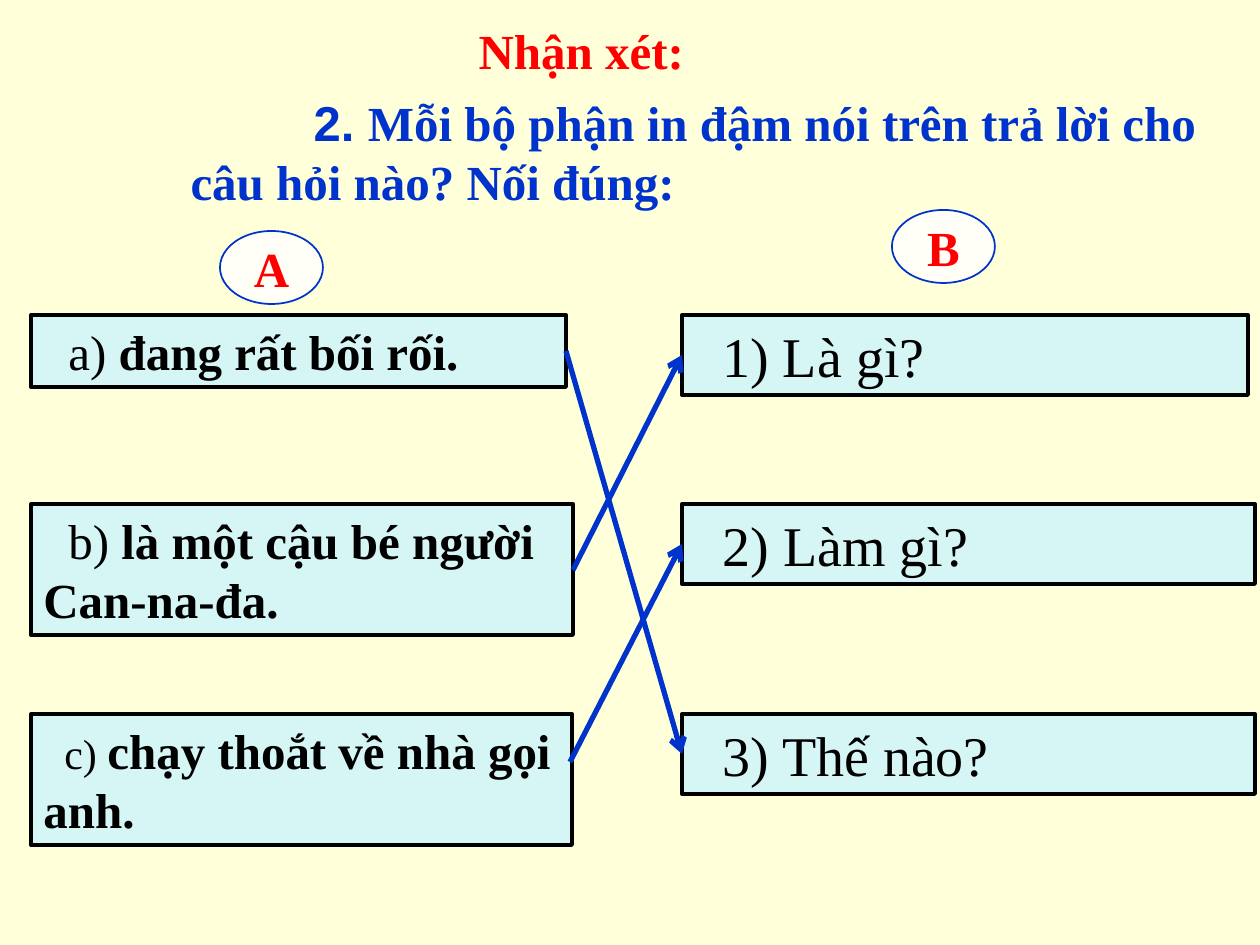
from pptx import Presentation
from pptx.dml.color import RGBColor
from pptx.enum.shapes import MSO_CONNECTOR, MSO_SHAPE
from pptx.enum.text import MSO_ANCHOR, MSO_AUTO_SIZE, PP_ALIGN
from pptx.oxml.ns import qn
from pptx.util import Pt
from lxml.etree import SubElement

PX = 914400 // 126
FONT = "Times New Roman"
COLORS = {"background": "FFFFD9", "red": "FF0000", "blue": "0033CC",
          "black": "000000", "box": "D6F5F5", "label": "FFFFF7"}

HEADING = ("Nhận xét:", (466, 14, 328, 72))
QUESTION = ([("2. ", 28, True, "Arial"),
             ("Mỗi bộ phận in đậm nói trên trả lời cho câu hỏi nào? Nối đúng:", 28, True, FONT)],
            (178, 86, 1070, 131), 123)
LABELS = [("A", 220, 231), ("B", 892, 210)]
LABEL_SIZE = (103, 73)
ROW_TOPS = [315, 504, 714]
LEFT_X, RIGHT_X = 31, 682
PHRASES = [("a) ", 28, "đang rất bối rối.", 535, 72, 25),
           ("b) ", 28, "là một cậu bé người Can-na-đa.", 542, 131, 25),
           ("c) ", 24, "chạy thoắt về nhà gọi anh.", 541, 131, 21)]
QUESTION_TYPES = [("1) Là gì?", 566), ("2) Làm gì?", 573), ("3) Thế nào?", 573)]
TYPE_HEIGHT = 80
MATCHES = [((566, 351), 2), ((573, 570), 0), ((570, 762), 1)]


def color(name):
    return RGBColor.from_string(COLORS[name])


def place(shape, area):
    shape.left, shape.top, shape.width, shape.height = (v * PX for v in area)


def write(shape, runs, ink, indent=0, align=PP_ALIGN.LEFT, anchor=MSO_ANCHOR.TOP):
    frame = shape.text_frame
    frame.word_wrap = True
    frame.auto_size = MSO_AUTO_SIZE.NONE
    frame.vertical_anchor = anchor
    paragraph = frame.paragraphs[0]
    properties = paragraph._p.get_or_add_pPr()
    properties.set("marL", "0")
    properties.set("indent", str(indent * PX))
    SubElement(properties, qn("a:buNone"))
    paragraph.alignment = align
    paragraph.space_before = Pt(0)
    paragraph.font.color.rgb = color(ink)
    for text, size, bold, font in runs:
        run = paragraph.add_run()
        run.text = text
        run.font.size, run.font.bold, run.font.name = Pt(size), bold, font
        run.font.color.rgb = color(ink)


def add_panel(slide, preset, area, fill, line, width):
    panel = slide.shapes.add_shape(preset, *(v * PX for v in area))
    panel.shadow.inherit = False
    panel.fill.solid()
    panel.fill.fore_color.rgb = color(fill)
    panel.line.color.rgb = color(line)
    panel.line.width = Pt(width)
    return panel


def add_box(slide, area, runs, indent):
    box = add_panel(slide, MSO_SHAPE.RECTANGLE, area, "box", "black", 2.25)
    write(box, runs, "black", indent)


def add_arrow(slide, start, end):
    arrow = slide.shapes.add_connector(MSO_CONNECTOR.STRAIGHT, *(v * PX for v in start + end))
    arrow.line.color.rgb = color("blue")
    arrow.line.width = Pt(3)
    SubElement(arrow.line._get_or_add_ln(), qn("a:tailEnd"), type="arrow")
    SubElement(arrow._element.spPr, qn("a:effectLst"))


def main():
    deck = Presentation()
    deck.slide_width, deck.slide_height = 1260 * PX, 945 * PX
    slide = deck.slides.add_slide(deck.slide_layouts[1])
    slide.background.fill.solid()
    slide.background.fill.fore_color.rgb = color("background")

    heading, question = slide.placeholders
    text, area = HEADING
    place(heading, area)
    write(heading, [(text, 28, True, FONT)], "red")
    runs, area, indent = QUESTION
    place(question, area)
    write(question, runs, "blue", indent)

    for top, (mark, size, phrase, width, height, indent) in zip(ROW_TOPS, PHRASES):
        runs = [(mark, size, False, FONT), (phrase, 28, True, FONT)]
        add_box(slide, (LEFT_X, top, width, height), runs, indent)
    for top, (text, width) in zip(ROW_TOPS, QUESTION_TYPES):
        add_box(slide, (RIGHT_X, top, width, TYPE_HEIGHT), [(text, 32, False, FONT)], 28)

    for letter, left, top in LABELS:
        label = add_panel(slide, MSO_SHAPE.OVAL, (left, top, *LABEL_SIZE), "label", "blue", 1)
        write(label, [(letter, 28, True, FONT)], "red",
              align=PP_ALIGN.CENTER, anchor=MSO_ANCHOR.MIDDLE)

    for start, row in MATCHES:
        add_arrow(slide, start, (RIGHT_X, ROW_TOPS[row] + TYPE_HEIGHT // 2))

    deck.save("out.pptx")


if __name__ == "__main__":
    main()
